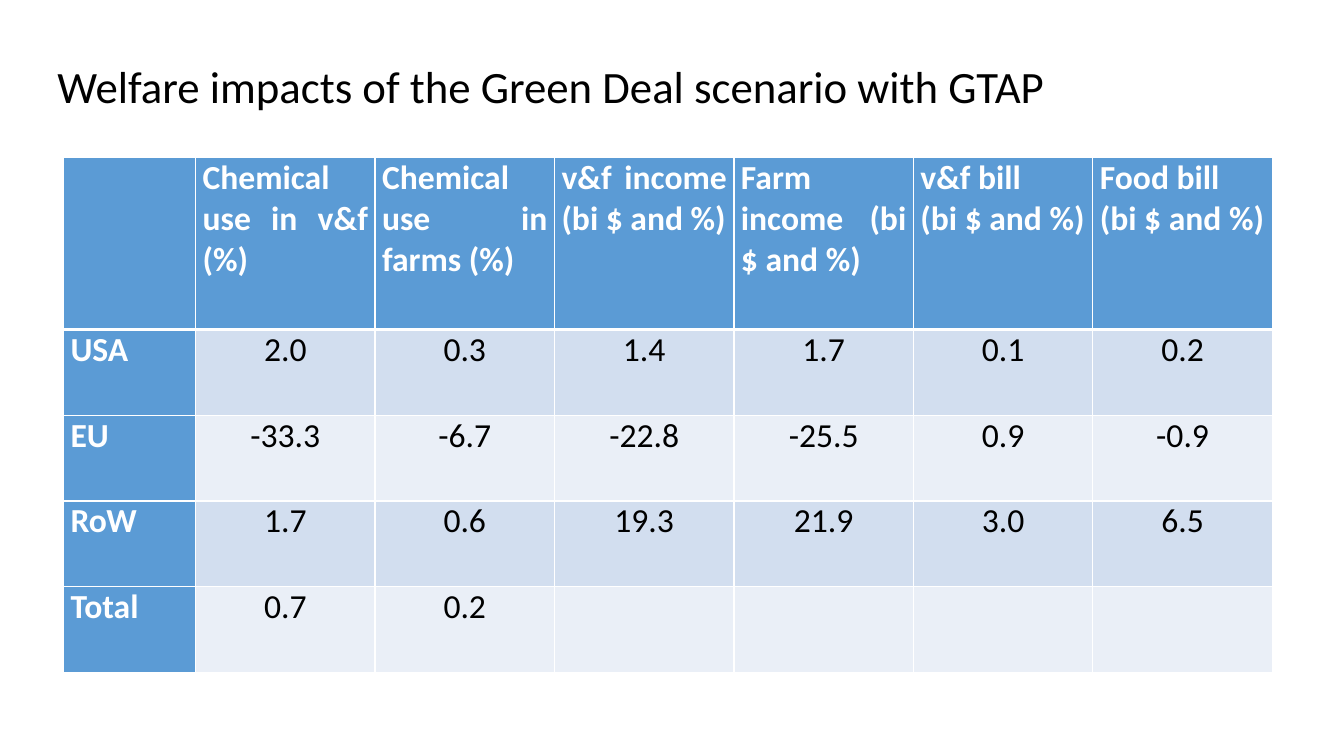
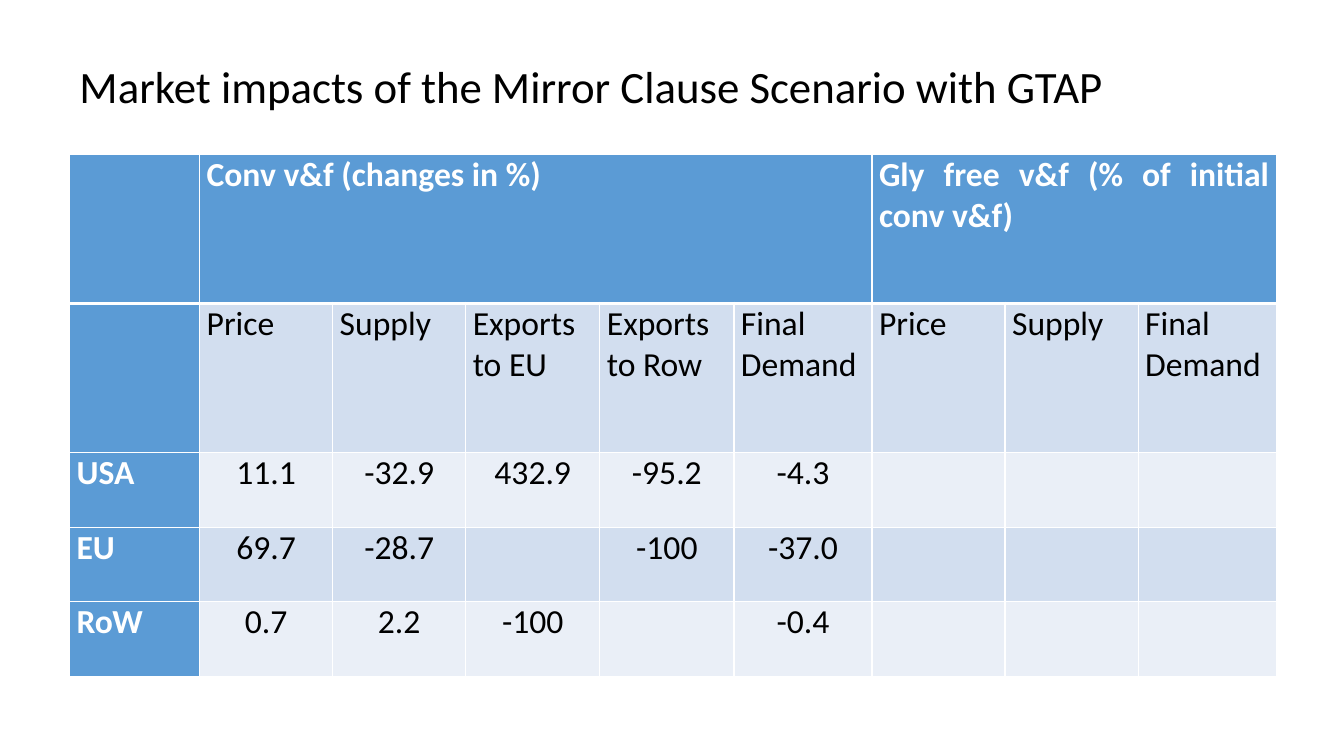
from dataclasses import dataclass

import pptx
import pptx.dml.color
import pptx.enum.text
import pptx.oxml.ns
import pptx.util
from lxml import etree

Inches = pptx.util.Inches
Pt = pptx.util.Pt
ALIGN = pptx.enum.text.PP_ALIGN


@dataclass(frozen=True)
class Theme:
    font: str = "Calibri"
    title_size: int = 32
    table_size: int = 24
    text: str = "000000"
    white: str = "FFFFFF"
    header: str = "5B9BD5"
    bands: tuple = ("EAEFF7", "D2DEEF")
    grid_width: int = 1
    header_rule: int = 3


THEME = Theme()


def rgb(value):
    return pptx.dml.color.RGBColor.from_string(value)


def style_paragraph(p, size, color, bold=False, align=ALIGN.LEFT):
    p.alignment = align
    for r in p.runs:
        r.font.name = THEME.font
        r.font.size = Pt(size)
        r.font.bold = bold
        r.font.color.rgb = rgb(color)


def add_title(slide, text, left):
    box = slide.shapes.add_textbox(Inches(left), Inches(0.53), Inches(12.2), Inches(0.64))
    tf = box.text_frame
    tf.word_wrap = True
    tf.text = text
    style_paragraph(tf.paragraphs[0], THEME.title_size, THEME.text)


def set_borders(cell, **widths):
    """Draw white borders; call before filling, as fills must follow lines in the XML."""
    tc_pr = cell._tc.get_or_add_tcPr()
    for side in "LRTB":
        width = widths.get(side, THEME.grid_width)
        ln = etree.SubElement(tc_pr, pptx.oxml.ns.qn(f"a:ln{side}"), w=str(Pt(width)))
        fill = etree.SubElement(ln, pptx.oxml.ns.qn("a:solidFill"))
        etree.SubElement(fill, pptx.oxml.ns.qn("a:srgbClr"), val=THEME.white)


def style_cell(cell, row, col, heading_rows):
    is_header = row == 0 or col == 0
    is_value = row >= heading_rows and col > 0
    rule = THEME.header_rule
    set_borders(cell, **({"B": rule} if row == 0 else {"T": rule} if row == 1 else {}))
    cell.fill.solid()
    cell.fill.fore_color.rgb = rgb(THEME.header if is_header else THEME.bands[row % 2])
    cell.margin_left = cell.margin_right = Inches(0.07)
    cell.margin_top = cell.margin_bottom = 0
    for p in cell.text_frame.paragraphs:
        style_paragraph(p, THEME.table_size, THEME.white if is_header else THEME.text,
                        is_header, ALIGN.CENTER if is_value else ALIGN.JUSTIFY)


def add_table(slide, left, top, widths, heights, rows, heading_rows=1, header_spans=()):
    """Fill a table; header_spans lists the (first, last) columns merged in the top row."""
    frame = slide.shapes.add_table(len(heights), len(widths), Inches(left), Inches(top),
                                   Inches(sum(widths)), Inches(sum(heights)))
    table = frame.table
    table.first_col = True
    for column, width in zip(table.columns, widths):
        column.width = Inches(width)
    for table_row, height in zip(table.rows, heights):
        table_row.height = Inches(height)
    for i, values in enumerate(rows):
        for j, value in enumerate(values):
            table.cell(i, j).text = value
    for first, last in header_spans:
        table.cell(0, first).merge(table.cell(0, last))
    for i in range(len(heights)):
        for j in range(len(widths)):
            style_cell(table.cell(i, j), i, j, heading_rows)


def add_welfare_slide(prs):
    slide = prs.slides.add_slide(prs.slide_layouts[6])
    add_title(slide, "Welfare impacts of the Green Deal scenario with GTAP", 0.47)
    rows = [
        ("", "Chemical use in v&f (%)", "Chemical use in farms (%)",
         "v&f income (bi $ and %)", "Farm income (bi $ and %)",
         "v&f bill\n(bi $ and %)", "Food bill\n(bi $ and %)"),
        ("USA", "2.0", "0.3", "1.4", "1.7", "0.1", "0.2"),
        ("EU", "-33.3", "-6.7", "-22.8", "-25.5", "0.9", "-0.9"),
        ("RoW", "1.7", "0.6", "19.3", "21.9", "3.0", "6.5"),
        ("Total", "0.7", "0.2"),
    ]
    add_table(slide, 0.63, 1.56, [1.31] + [1.78] * 6, [1.71] + [0.85] * 4, rows)


def add_market_slide(prs):
    slide = prs.slides.add_slide(prs.slide_layouts[6])
    add_title(slide, "Market impacts of the Mirror Clause Scenario with GTAP", 0.69)
    rows = [
        ("", "Conv v&f (changes in %)", "", "", "", "",
         "Gly free v&f (% of initial conv v&f)"),
        ("", "Price", "Supply", "Exports to EU", "Exports to Row", "Final Demand",
         "Price", "Supply", "Final Demand"),
        ("USA", "11.1", "-32.9", "432.9", "-95.2", "-4.3"),
        ("EU", "69.7", "-28.7", "", "-100", "-37.0"),
        ("RoW", "0.7", "2.2", "-100", "", "-0.4"),
    ]
    widths = [1.29, 1.32, 1.32, 1.33, 1.33, 1.37, 1.32, 1.32, 1.37]
    add_table(slide, 0.69, 1.53, widths, [1.48] * 2 + [0.74] * 3, rows,
              heading_rows=2, header_spans=[(1, 5), (6, 8)])


def main():
    prs = pptx.Presentation()
    prs.slide_width = Inches(13.33)
    prs.slide_height = Inches(7.5)
    add_welfare_slide(prs)
    add_market_slide(prs)
    prs.save("out.pptx")


if __name__ == "__main__":
    main()
